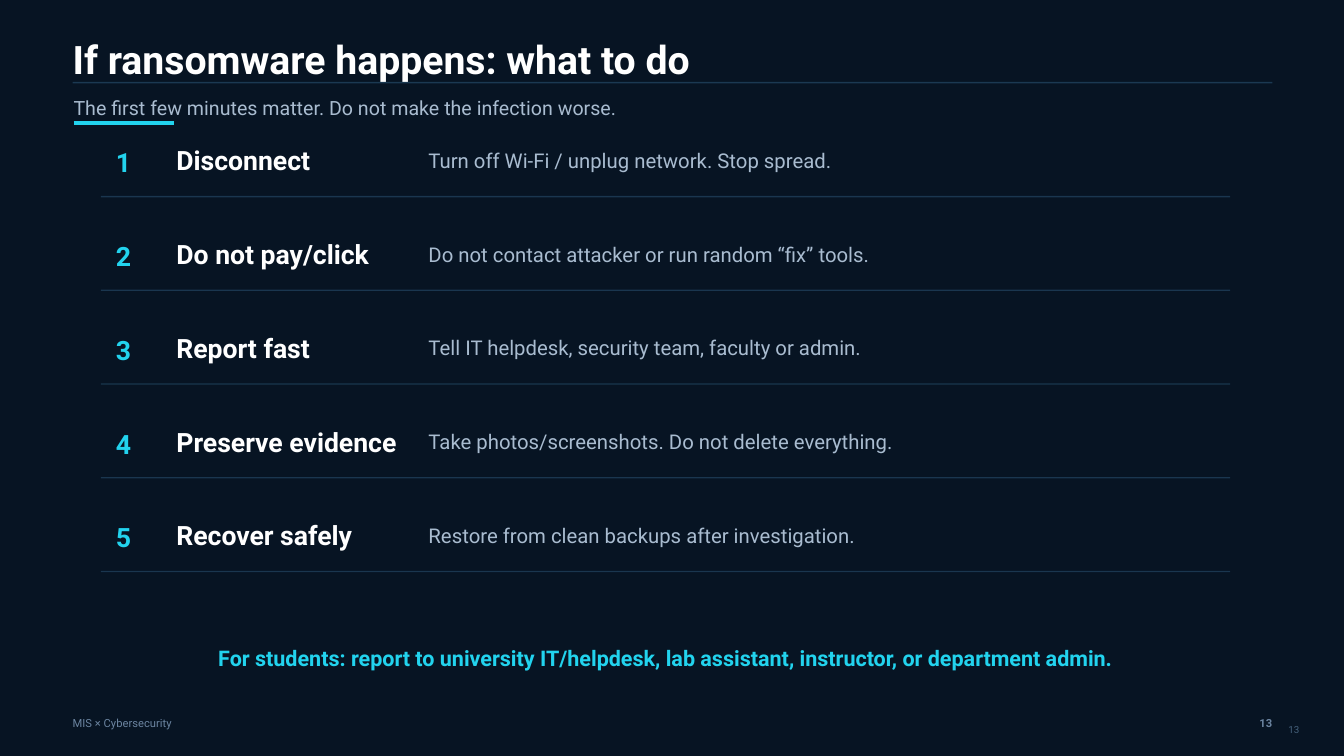
from dataclasses import dataclass

import lxml.etree
import pptx
import pptx.dml.color
import pptx.enum.shapes
import pptx.enum.text
import pptx.oxml.ns
import pptx.shapes.base
import pptx.slide
import pptx.util

FONT = "Roboto"
BACKGROUND = "071423"
WHITE = "FFFFFF"
CYAN = "22D3EE"
MUTED = "A9BCD0"
FOOTER = "6B84A0"
PAGE_NUMBER = "45617B"
RULE = "244966"

LEFT = pptx.enum.text.PP_ALIGN.LEFT
CENTER = pptx.enum.text.PP_ALIGN.CENTER
RIGHT = pptx.enum.text.PP_ALIGN.RIGHT

FIRST_STEP_TOP = 1.47
STEP_PITCH = 0.93


@dataclass(frozen=True)
class Box:
    left: float
    top: float
    width: float
    height: float


@dataclass(frozen=True)
class Style:
    size: float
    color: str
    bold: bool = False
    align: pptx.enum.text.PP_ALIGN = LEFT


@dataclass(frozen=True)
class Step:
    action: str
    advice: str


STEPS = [
    Step("Disconnect", "Turn off Wi‑Fi / unplug network. Stop spread."),
    Step("Do not pay/click", "Do not contact attacker or run random “fix” tools."),
    Step("Report fast", "Tell IT helpdesk, security team, faculty or admin."),
    Step("Preserve evidence", "Take photos/screenshots. Do not delete everything."),
    Step("Recover safely", "Restore from clean backups after investigation."),
]

NUMBER_STYLE = Style(19, CYAN, bold=True, align=CENTER)
ACTION_STYLE = Style(19, WHITE, bold=True)
ADVICE_STYLE = Style(14.5, MUTED)


def rgb(color: str) -> pptx.dml.color.RGBColor:
    return pptx.dml.color.RGBColor.from_string(color)


def write_text(shape: pptx.shapes.base.BaseShape, box: Box, text: str, style: Style) -> None:
    """Place a text shape and fill it with one formatted run, without insets."""
    shape.left, shape.top = pptx.util.Inches(box.left), pptx.util.Inches(box.top)
    shape.width, shape.height = pptx.util.Inches(box.width), pptx.util.Inches(box.height)
    frame = shape.text_frame
    frame.word_wrap = True
    frame.auto_size = pptx.enum.text.MSO_AUTO_SIZE.NONE
    frame.vertical_anchor = pptx.enum.text.MSO_ANCHOR.MIDDLE
    frame.margin_left = frame.margin_right = pptx.util.Inches(0)
    frame.margin_top = frame.margin_bottom = pptx.util.Inches(0)
    paragraph = frame.paragraphs[0]
    paragraph.alignment = style.align
    run = paragraph.add_run()
    run.text = text
    run.font.name = FONT
    run.font.size = pptx.util.Pt(style.size)
    run.font.bold = style.bold
    run.font.color.rgb = rgb(style.color)


def add_text(
    slide: pptx.slide.Slide, box: Box, text: str, style: Style
) -> pptx.shapes.base.BaseShape:
    shape = slide.shapes.add_textbox(0, 0, 0, 0)
    write_text(shape, box, text, style)
    return shape


def add_rule(
    slide: pptx.slide.Slide,
    left: float,
    right: float,
    top: float,
    color: str = RULE,
    width: float = 1,
    opacity: int = 100,
) -> None:
    """Draw a horizontal line; opacity is a percentage."""
    line = slide.shapes.add_connector(
        pptx.enum.shapes.MSO_CONNECTOR.STRAIGHT,
        pptx.util.Inches(left),
        pptx.util.Inches(top),
        pptx.util.Inches(right),
        pptx.util.Inches(top),
    )
    line.line.color.rgb = rgb(color)
    line.line.width = pptx.util.Pt(width)
    properties = line._element.spPr
    if opacity < 100:
        color_element = properties.find(".//" + pptx.oxml.ns.qn("a:srgbClr"))
        alpha = lxml.etree.SubElement(color_element, pptx.oxml.ns.qn("a:alpha"))
        alpha.set("val", str(opacity * 1000))
    lxml.etree.SubElement(properties, pptx.oxml.ns.qn("a:effectLst"))


def add_header(slide: pptx.slide.Slide) -> None:
    add_rule(slide, 0.72, 12.62, 0.82, opacity=70)
    write_text(
        slide.shapes.title,
        Box(0.72, 0.35, 11.2, 0.46),
        "If ransomware happens: what to do",
        Style(28, WHITE, bold=True),
    )
    add_text(
        slide,
        Box(0.73, 0.93, 11.4, 0.28),
        "The first few minutes matter. Do not make the infection worse.",
        Style(14, MUTED),
    )
    add_rule(slide, 0.73, 1.73, 1.22, color=CYAN, width=3)


def add_step(slide: pptx.slide.Slide, number: int, step: Step) -> None:
    top = FIRST_STEP_TOP + (number - 1) * STEP_PITCH
    add_text(slide, Box(1, top, 0.45, 0.28), str(number), NUMBER_STYLE)
    add_text(slide, Box(1.75, top, 2.3, 0.24), step.action, ACTION_STYLE)
    add_text(slide, Box(4.25, top + 0.02, 7.5, 0.2), step.advice, ADVICE_STYLE)
    add_rule(slide, 1, 12.2, top + 0.48, opacity=65)


def add_footer(slide: pptx.slide.Slide) -> None:
    add_text(
        slide,
        Box(1.15, 6.42, 10.9, 0.22),
        "For students: report to university IT/helpdesk, lab assistant, "
        "instructor, or department admin.",
        Style(15.4, CYAN, bold=True, align=CENTER),
    )
    add_text(slide, Box(0.72, 7.08, 2.4, 0.18), "MIS × Cybersecurity", Style(8, FOOTER))
    add_text(
        slide, Box(12.22, 7.08, 0.4, 0.18), "13", Style(8, FOOTER, bold=True, align=RIGHT)
    )
    page_number = add_text(
        slide, Box(12.68, 7.13, 0.87, 0.33), "13", Style(7, PAGE_NUMBER)
    )
    frame = page_number.text_frame
    frame.vertical_anchor = pptx.enum.text.MSO_ANCHOR.TOP
    frame.margin_left = frame.margin_right = pptx.util.Inches(0.1)
    frame.margin_top = frame.margin_bottom = pptx.util.Inches(0.05)


def main() -> None:
    presentation = pptx.Presentation()
    presentation.slide_width = pptx.util.Inches(13.33)
    presentation.slide_height = pptx.util.Inches(7.5)
    title_only = presentation.slide_layouts.get_by_name("Title Only")
    slide = presentation.slides.add_slide(title_only)
    slide.background.fill.solid()
    slide.background.fill.fore_color.rgb = rgb(BACKGROUND)
    add_header(slide)
    for number, step in enumerate(STEPS, start=1):
        add_step(slide, number, step)
    add_footer(slide)
    presentation.save("out.pptx")


if __name__ == "__main__":
    main()
